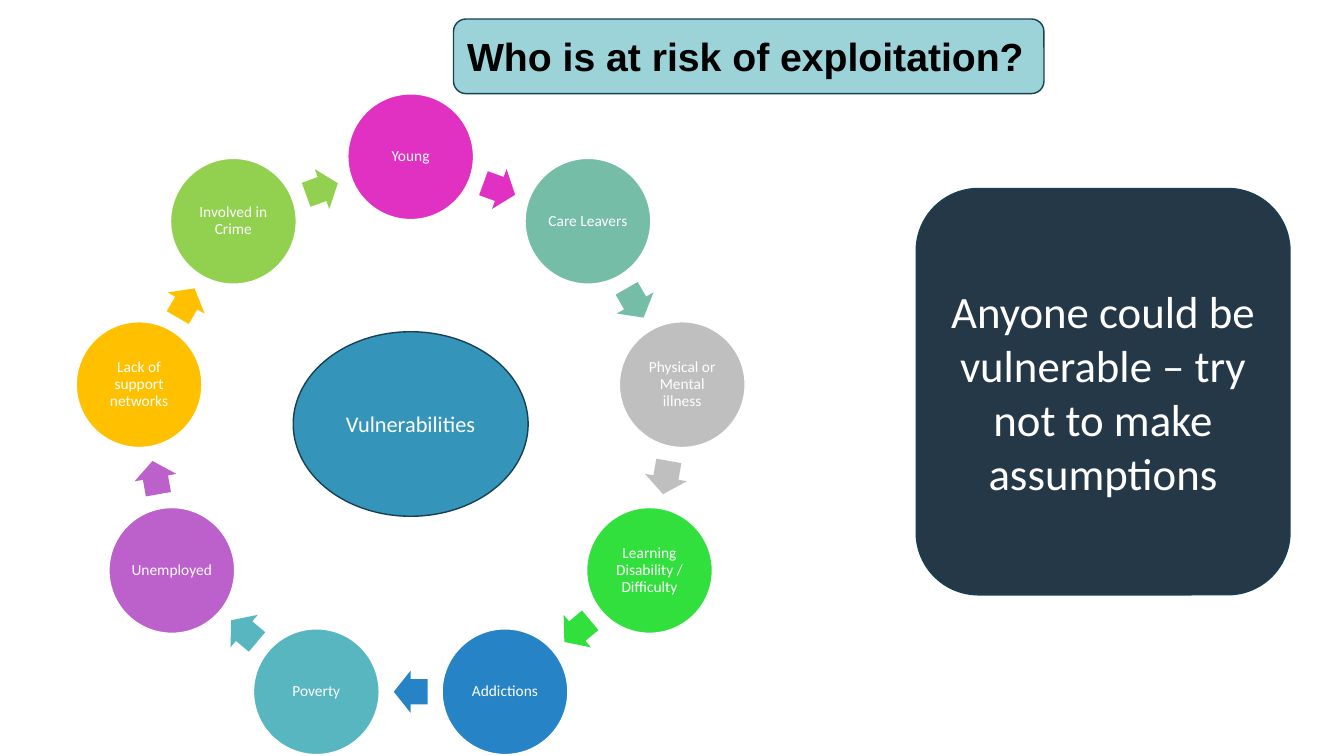
from math import cos, pi, sin

from pptx import Presentation
from pptx.dml.color import RGBColor
from pptx.enum.shapes import MSO_SHAPE
from pptx.enum.text import MSO_ANCHOR, PP_ALIGN
from pptx.util import Cm, Pt

WHITE = RGBColor(0xFF, 0xFF, 0xFF)
BLACK = RGBColor(0x00, 0x00, 0x00)
OUTLINE = RGBColor(0x17, 0x41, 0x52)
PALE_TEAL = RGBColor(0x9B, 0xD3, 0xD9)
MID_BLUE = RGBColor(0x34, 0x94, 0xBA)
NAVY = RGBColor(0x25, 0x38, 0x48)

TITLE = "Who is at risk of exploitation?"
HUB = "Vulnerabilities"
MESSAGE = "Anyone could be vulnerable – try not to make assumptions"
# Clockwise from the top
RISKS = [
    ("Young", RGBColor(0xE0, 0x31, 0xC3)),
    ("Care Leavers", RGBColor(0x75, 0xBD, 0xA7)),
    ("Physical or Mental illness", RGBColor(0xBF, 0xBF, 0xBF)),
    ("Learning Disability / Difficulty", RGBColor(0x31, 0xE0, 0x3D)),
    ("Addictions", RGBColor(0x26, 0x83, 0xC6)),
    ("Poverty", RGBColor(0x58, 0xB6, 0xC0)),
    ("Unemployed", RGBColor(0xBC, 0x60, 0xCC)),
    ("Lack of support networks", RGBColor(0xFF, 0xC0, 0x00)),
    ("Involved in Crime", RGBColor(0x92, 0xD0, 0x50)),
]

# Ring measures in centimetres
RING_X, RING_Y, RING_RADIUS = 10.35, 10.9, 6.95
CIRCLE = 3.17
ARROW_LENGTH, ARROW_WIDTH = 0.85, 1.07

presentation = Presentation()
presentation.slide_width = Cm(33.87)
presentation.slide_height = Cm(19.05)
slide = presentation.slides.add_slide(presentation.slide_layouts[6])


def add_figure(preset, left, top, width, height, fill, line=None):
    figure = slide.shapes.add_shape(preset, Cm(left), Cm(top), Cm(width), Cm(height))
    figure.shadow.inherit = False
    figure.fill.solid()
    figure.fill.fore_color.rgb = fill
    if line is None:
        figure.line.fill.background()
    else:
        figure.line.color.rgb = line
        figure.line.width = Pt(1)
    return figure


def write(figure, text, *, size, font="Calibri", color=WHITE, bold=False,
          align=PP_ALIGN.CENTER, spacing=1.0, inset=None):
    frame = figure.text_frame
    frame.word_wrap = True
    frame.vertical_anchor = MSO_ANCHOR.MIDDLE
    if inset is not None:
        frame.margin_left = frame.margin_right = Cm(inset)
        frame.margin_top = frame.margin_bottom = Cm(inset)
    paragraph = frame.paragraphs[0]
    paragraph.alignment = align
    paragraph.line_spacing = spacing
    run = paragraph.add_run()
    run.text = text
    run.font.name = font
    run.font.size = Pt(size)
    run.font.bold = bold
    run.font.color.rgb = color


def ring_corner(degrees, radius, width, height):
    """Left and top of a part centred on the ring, clockwise from the top."""
    angle = degrees * pi / 180
    return (RING_X + radius * sin(angle) - width / 2,
            RING_Y - radius * cos(angle) - height / 2)


title = add_figure(MSO_SHAPE.ROUNDED_RECTANGLE, 11.43, 0.48, 14.88, 1.88,
                   PALE_TEAL, OUTLINE)
write(title, TITLE, size=28, font="Arial", color=BLACK, bold=True,
      align=PP_ALIGN.LEFT)

step = 360 / len(RISKS)
arrow_radius = RING_RADIUS * cos(step / 2 * pi / 180)
for index, (risk, color) in enumerate(RISKS):
    left, top = ring_corner(index * step, RING_RADIUS, CIRCLE, CIRCLE)
    circle = add_figure(MSO_SHAPE.OVAL, left, top, CIRCLE, CIRCLE, color, WHITE)
    write(circle, risk, size=11, spacing=0.9, inset=0.05)

    heading = (index + 0.5) * step
    left, top = ring_corner(heading, arrow_radius, ARROW_LENGTH, ARROW_WIDTH)
    arrow = add_figure(MSO_SHAPE.RIGHT_ARROW, left, top,
                       ARROW_LENGTH, ARROW_WIDTH, color)
    arrow.adjustments[0] = 0.6
    arrow.adjustments[1] = 0.5
    arrow.rotation = heading

hub = add_figure(MSO_SHAPE.OVAL, 7.39, 8.36, 5.92, 4.65, MID_BLUE, OUTLINE)
write(hub, HUB, size=16)

message = add_figure(MSO_SHAPE.ROUNDED_RECTANGLE, 23.09, 4.75, 9.42, 10.24,
                     NAVY, OUTLINE)
write(message, MESSAGE, size=32)

presentation.save("out.pptx")
